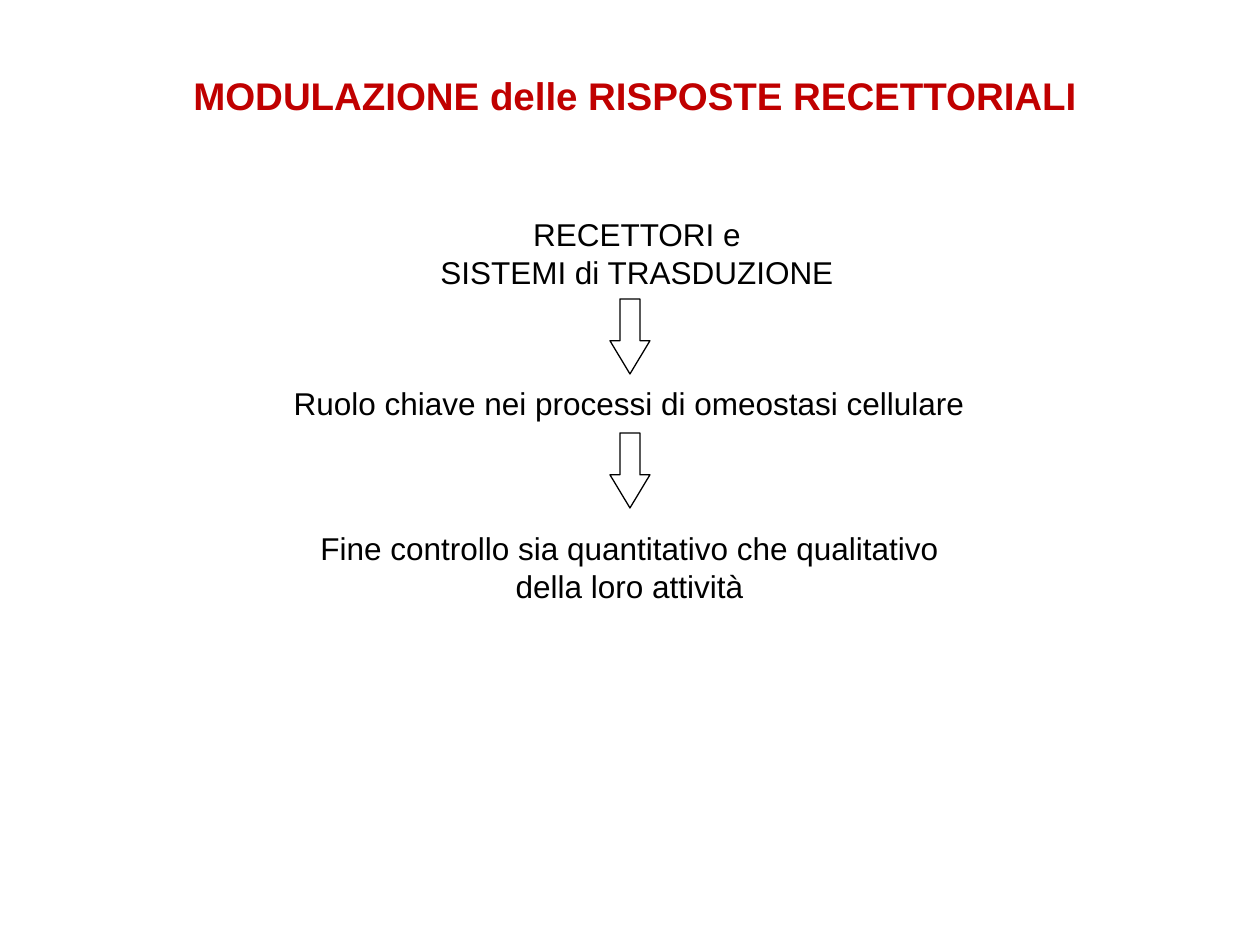
from pptx import Presentation, util as u
from pptx.dml.color import RGBColor
from pptx.enum import shapes, text

PX = u.Inches(1) // 126
COLORS = {"title": "C00000", "body": "000000", "line": "000000"}
FONT = "Arial"

# lines, (left, top, width, height) in px, size in pt, bold, colour
TEXTS = [
    (["MODULAZIONE delle RISPOSTE RECETTORIALI"],
     (175, 66, 920, 59), 22, True, "title"),
    (["RECETTORI e", "SISTEMI di TRASDUZIONE"],
     (426, 209, 422, 89), 18, False, "body"),
    (["Ruolo chiave nei processi di omeostasi cellulare"],
     (278, 378, 702, 50), 18, False, "body"),
    (["Fine controllo sia quantitativo che qualitativo", "della loro attività"],
     (305, 523, 649, 89), 18, False, "body"),
]
ARROW_TOPS = [299, 433]
ARROW_LEFT, ARROW_W, ARROW_H = 610, 40, 75


def px(*lengths):
    return [n * PX for n in lengths]


def add_text(s, lines, box, size, bold, color):
    tf = s.shapes.add_textbox(*px(*box)).text_frame
    tf.word_wrap = False
    tf.auto_size = text.MSO_AUTO_SIZE.SHAPE_TO_FIT_TEXT
    tf.text = "\n".join(lines)
    for p in tf.paragraphs:
        p.alignment = text.PP_ALIGN.CENTER
        for r in p.runs:
            r.font.name = FONT
            r.font.size = u.Pt(size)
            r.font.bold = bold
            r.font.color.rgb = RGBColor.from_string(COLORS[color])


def add_arrow(s, top):
    sp = s.shapes.add_shape(shapes.MSO_SHAPE.DOWN_ARROW,
                            *px(ARROW_LEFT, top, ARROW_W, ARROW_H))
    sp.adjustments[0] = 0.5
    sp.adjustments[1] = 0.83
    sp.shadow.inherit = False
    sp.fill.background()
    sp.line.color.rgb = RGBColor.from_string(COLORS["line"])
    sp.line.width = u.Pt(0.75)


def main():
    prs = Presentation()
    prs.slide_width, prs.slide_height = px(1260, 945)
    s = prs.slides.add_slide(prs.slide_layouts[6])
    for item in TEXTS:
        add_text(s, *item)
    for top in ARROW_TOPS:
        add_arrow(s, top)
    prs.save("out.pptx")


if __name__ == "__main__":
    main()
